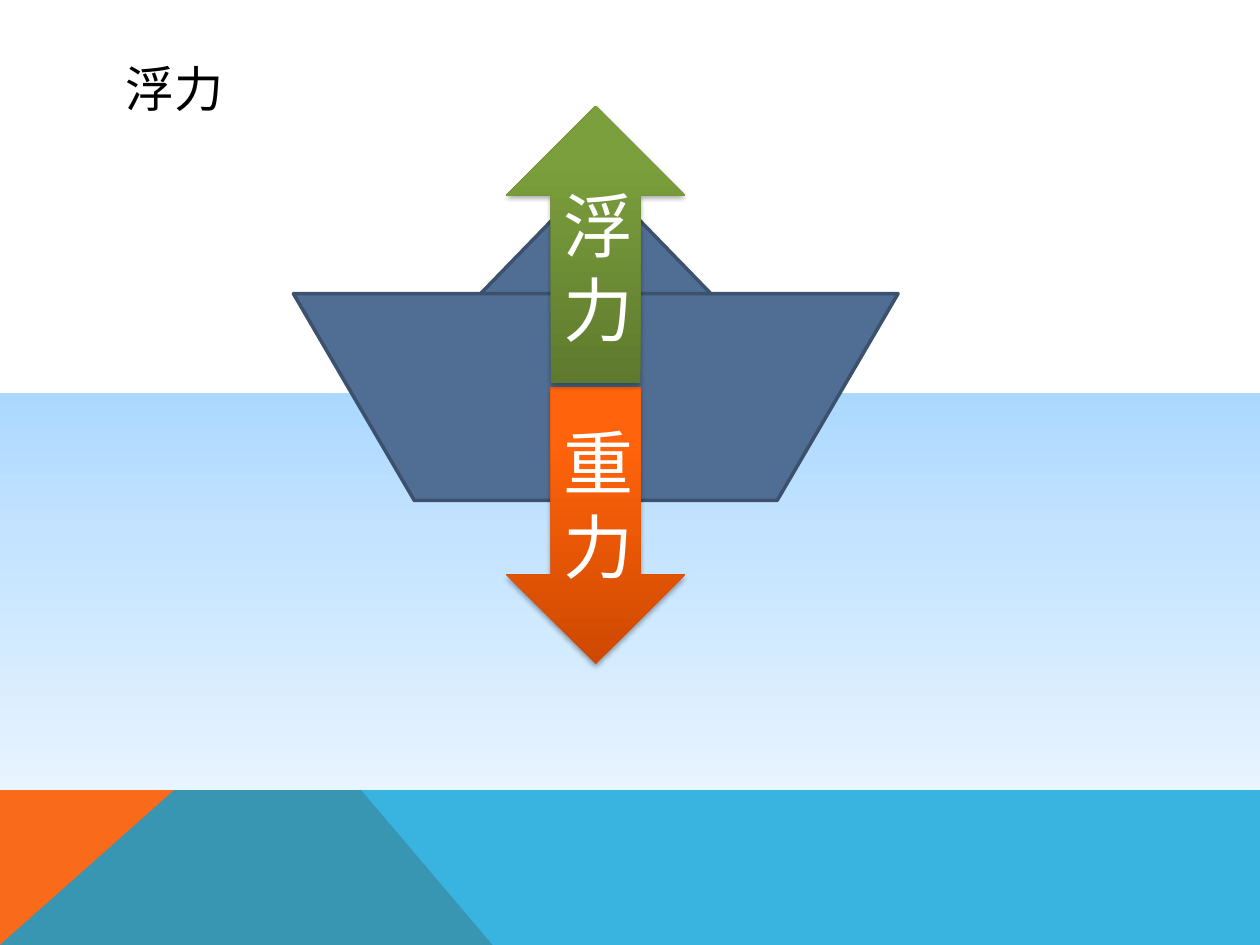
from lxml import etree
from pptx import Presentation
from pptx.dml.color import RGBColor
from pptx.enum.shapes import MSO_SHAPE
from pptx.enum.text import MSO_ANCHOR, PP_ALIGN
from pptx.oxml.ns import qn
from pptx.util import Cm, Pt

RECT, TRIANGLE = MSO_SHAPE.RECTANGLE, MSO_SHAPE.ISOSCELES_TRIANGLE
HULL = MSO_SHAPE.FLOWCHART_MANUAL_OPERATION
UP, DOWN = MSO_SHAPE.UP_ARROW, MSO_SHAPE.DOWN_ARROW
MIDDLE, LEFT, CENTER = MSO_ANCHOR.MIDDLE, PP_ALIGN.LEFT, PP_ALIGN.CENTER

FONT = "Lato"
COLORS = {
    "orange": "F96A1B", "blue": "08A1D9", "ship": "506E94", "edge": "3B516D",
    "black": "000000", "white": "FFFFFF",
}
GRADIENTS = {  # (position in percent, colour)
    "sea": [(0, "ABD8FF"), (35, "C3E3FF"), (100, "E8F4FF")],
    "gravity": [(0, "CE4900"), (80, "FF630C"), (100, "FF640E")],
    "buoyancy": [(0, "5F7A2E"), (80, "7B9F3C"), (100, "7CA13B")],
}

# Lengths in cm
WIDTH, HEIGHT = 25.4, 19.05
BAND_TOP, PEAK_X, FOOT_X = 14.02, 5.66, 9.93
SHIP_X = 12.01  # centre line of ship and arrows
TITLE = ("浮力", (2.29, 1.02, 20.88, 1.52))
SEA = (0, 7.92, WIDTH, 8)
BANDS = [  # outline, colour, opacity in percent
    ([(0, HEIGHT), (0, BAND_TOP), (PEAK_X, BAND_TOP), (FOOT_X, HEIGHT)], "orange", 100),
    ([(0, HEIGHT), (PEAK_X, BAND_TOP), (WIDTH, BAND_TOP), (WIDTH, HEIGHT)], "blue", 80),
]
SHIP = [(TRIANGLE, 3.53, 7.01, 3.61), (HULL, 5.92, 12.19, 4.17)]  # top, width, height
ARROW_SIZE = (3.61, 5.59)
ARROWS = [(DOWN, "重力", "gravity", 7.8), (UP, "浮力", "buoyancy", 2.13)]


def rgb(name):
    return RGBColor.from_string(COLORS[name])


def add_shape(shapes, kind, x, y, w, h):
    sp = shapes.add_shape(kind, Cm(x), Cm(y), Cm(w), Cm(h))
    sp.shadow.inherit = False
    sp.line.fill.background()
    return sp


def fill_gradient(sp, stops, angle):
    """Fill with any number of stops; angle is counter-clockwise."""
    sp.fill.gradient()
    sp.fill.gradient_angle = angle
    stop_list = sp.element.spPr.find(".//" + qn("a:gsLst"))
    for old in list(stop_list):
        stop_list.remove(old)
    for position, color in stops:
        gs = etree.SubElement(stop_list, qn("a:gs"), pos=str(position * 1000))
        etree.SubElement(gs, qn("a:srgbClr"), val=color)


def add_shadow(sp):
    effects = sp.element.spPr.find(qn("a:effectLst"))
    shadow = etree.SubElement(effects, qn("a:outerShdw"), blurRad=str(Pt(3.1)),
                              dist=str(Pt(1.8)), dir="5400000", rotWithShape="0")
    color = etree.SubElement(shadow, qn("a:srgbClr"), val=COLORS["black"])
    etree.SubElement(color, qn("a:alpha"), val="35000")


def write(sp, lines, size, color, align=LEFT):
    tf = sp.text_frame
    tf.word_wrap = True
    tf.vertical_anchor = MIDDLE
    for i, line in enumerate(lines):
        p = tf.add_paragraph() if i else tf.paragraphs[0]
        p.alignment = align
        r = p.add_run()
        r.text = line
        r.font.name, r.font.size = FONT, Pt(size)
        r.font.color.rgb = rgb(color)


def add_band(shapes, points, color, opacity):
    start, *rest = [(Cm(x), Cm(y)) for x, y in points]
    builder = shapes.build_freeform(*start)
    builder.add_line_segments(rest, close=True)
    sp = builder.convert_to_shape()
    sp.shadow.inherit = False
    sp.line.fill.background()
    sp.fill.solid()
    sp.fill.fore_color.rgb = rgb(color)
    if opacity < 100:
        clr = sp.element.spPr.find(qn("a:solidFill")).find(qn("a:srgbClr"))
        etree.SubElement(clr, qn("a:alpha"), val=str(opacity * 1000))


def main():
    prs = Presentation()
    prs.slide_width, prs.slide_height = Cm(WIDTH), Cm(HEIGHT)
    shapes = prs.slides.add_slide(prs.slide_layouts[6]).shapes

    for band in BANDS:
        add_band(shapes, *band)

    title, box = TITLE
    write(shapes.add_textbox(*map(Cm, box)), [title], 28, "black")

    fill_gradient(add_shape(shapes, RECT, *SEA), GRADIENTS["sea"], 270)

    ship = shapes.add_group_shape()
    for kind, top, w, h in SHIP:
        sp = add_shape(ship.shapes, kind, SHIP_X - w / 2, top, w, h)
        sp.fill.solid()
        sp.fill.fore_color.rgb = rgb("ship")
        sp.line.color.rgb = rgb("edge")
        sp.line.width = Pt(2)

    w, h = ARROW_SIZE
    for kind, force, gradient, top in ARROWS:
        sp = add_shape(shapes, kind, SHIP_X - w / 2, top, w, h)
        fill_gradient(sp, GRADIENTS[gradient], 90)
        add_shadow(sp)
        write(sp, force, 40, "white", align=CENTER)

    prs.save("out.pptx")


if __name__ == "__main__":
    main()
